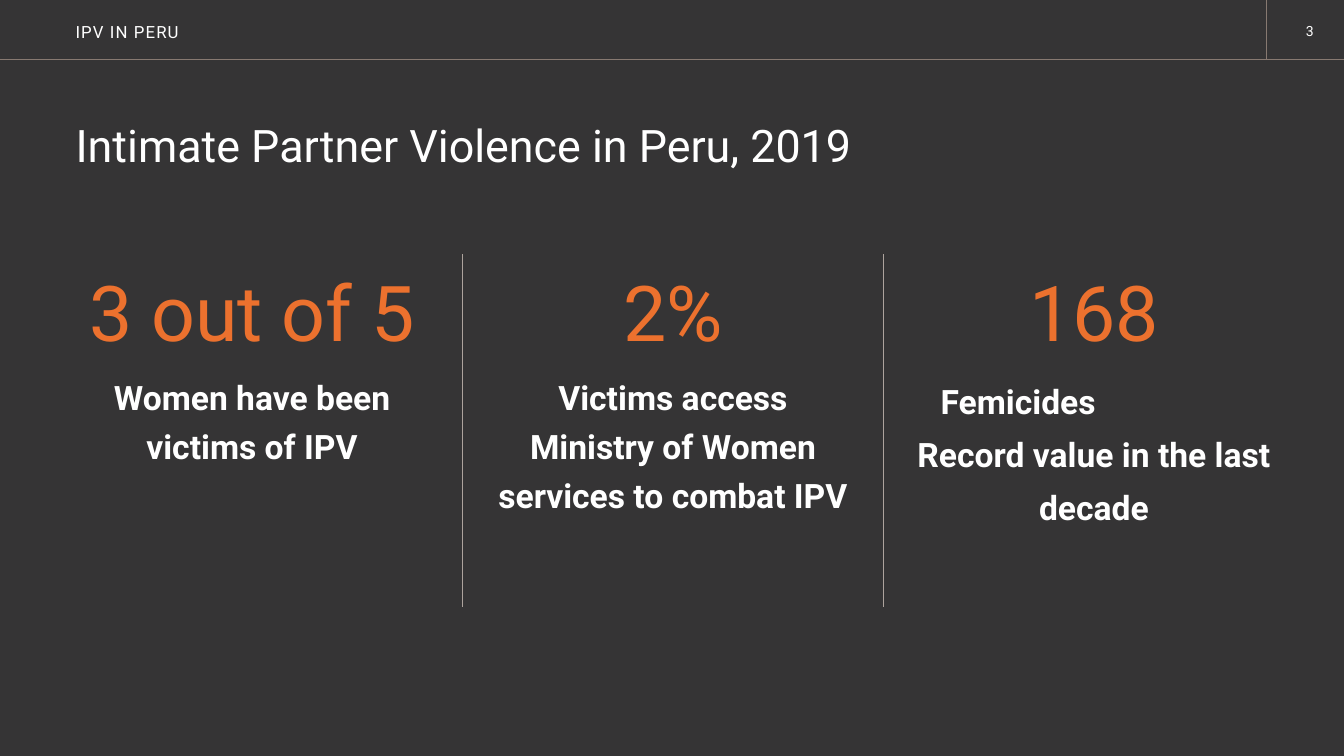
from dataclasses import dataclass

from lxml import etree
from pptx import Presentation
from pptx.dml.color import RGBColor
from pptx.enum import shapes, text
from pptx.oxml import ns
from pptx.util import Inches, Pt


@dataclass(frozen=True)
class Theme:
    font: str = "Roboto"
    background: str = "353435"
    body: str = "FFFFFF"
    accent: str = "EC712E"
    header_rule: str = "877971"
    column_rule: str = "ADA39D"
    page_size: float = 10
    header_size: float = 12
    title_size: float = 32
    figure_size: float = 55
    caption_size: float = 24


THEME = Theme()
LEFT, ALIGN = 0.75, text.PP_ALIGN
COLUMN_WIDTH, COLUMN_STEP = 3.5, 4.175

# Figure, caption line pitch, caption paragraphs as (wording, alignment, indent)
STATISTICS = [
    ("3 out of 5", 35, [("Women have been victims of IPV", ALIGN.CENTER, 0)]),
    ("2%", 35, [("Victims access Ministry of Women services to combat IPV", ALIGN.CENTER, 0)]),
    ("168", 38, [("Femicides", ALIGN.LEFT, 0.23),
                 ("Record value in the last decade", ALIGN.CENTER, 0)]),
]


def add_text_box(slide, left, top, width, height, anchor=text.MSO_ANCHOR.TOP):
    box = slide.shapes.add_textbox(Inches(left), Inches(top), Inches(width), Inches(height))
    frame = box.text_frame
    frame.word_wrap = True
    frame.vertical_anchor = anchor
    frame.margin_left = frame.margin_right = frame.margin_top = frame.margin_bottom = 0
    return frame


def add_run(paragraph, wording, size, color=THEME.body, bold=False):
    run = paragraph.add_run()
    run.text = wording
    run.font.name = THEME.font
    run.font.size = Pt(size)
    run.font.bold = bold
    run.font.color.rgb = RGBColor.from_string(color)
    return run


def add_rule(slide, start, end, color, width):
    rule = slide.shapes.add_connector(
        shapes.MSO_CONNECTOR.STRAIGHT, *(Inches(value) for value in (*start, *end)))
    rule.line.color.rgb = RGBColor.from_string(color)
    rule.line.width = Pt(width)
    etree.SubElement(rule._element.spPr, ns.qn("a:effectLst"))


def add_header(slide):
    add_rule(slide, (0, 0.59), (13.33, 0.59), THEME.header_rule, 0.65)
    add_rule(slide, (12.56, 0), (12.56, 0.59), THEME.header_rule, 0.65)

    page = add_text_box(slide, 12.59, 0.22, 0.44, 0.17).paragraphs[0]
    page.alignment = ALIGN.RIGHT
    add_run(page, "3", THEME.page_size)

    header = add_text_box(slide, LEFT, 0.02, 8.4, 0.6, text.MSO_ANCHOR.MIDDLE)
    run = add_run(header.paragraphs[0], "IPV IN PERU", THEME.header_size)
    run.font._element.set("spc", "80")


def add_statistic(slide, left, figure, pitch, caption):
    heading = add_text_box(slide, left, 2.62, COLUMN_WIDTH, 0.92).paragraphs[0]
    heading.alignment = ALIGN.CENTER
    add_run(heading, figure, THEME.figure_size, THEME.accent)

    frame = add_text_box(slide, left, 3.65, COLUMN_WIDTH, 2.35)
    for index, (wording, alignment, indent) in enumerate(caption):
        paragraph = frame.add_paragraph() if index else frame.paragraphs[0]
        paragraph.alignment = alignment
        paragraph.line_spacing = Pt(pitch)
        if indent:
            paragraph._p.get_or_add_pPr().set("marL", str(Inches(indent)))
        add_run(paragraph, wording, THEME.caption_size, bold=True)


def main():
    presentation = Presentation()
    presentation.slide_width, presentation.slide_height = Inches(13.33), Inches(7.5)
    slide = presentation.slides.add_slide(presentation.slide_layouts[6])
    slide.background.fill.solid()
    slide.background.fill.fore_color.rgb = RGBColor.from_string(THEME.background)

    # Header and title
    add_header(slide)
    title = add_text_box(slide, LEFT, 1.17, 10.7, 1)
    add_run(title.paragraphs[0], "Intimate Partner Violence in Peru, 2019", THEME.title_size)

    # Three statistics with a rule between neighbours
    for index, statistic in enumerate(STATISTICS):
        left = LEFT + index * COLUMN_STEP
        add_statistic(slide, left, *statistic)
        if index:
            rule_x = left - 0.34
            add_rule(slide, (rule_x, 6.02), (rule_x, 2.52), THEME.column_rule, 0.7)

    presentation.save("out.pptx")


if __name__ == "__main__":
    main()
